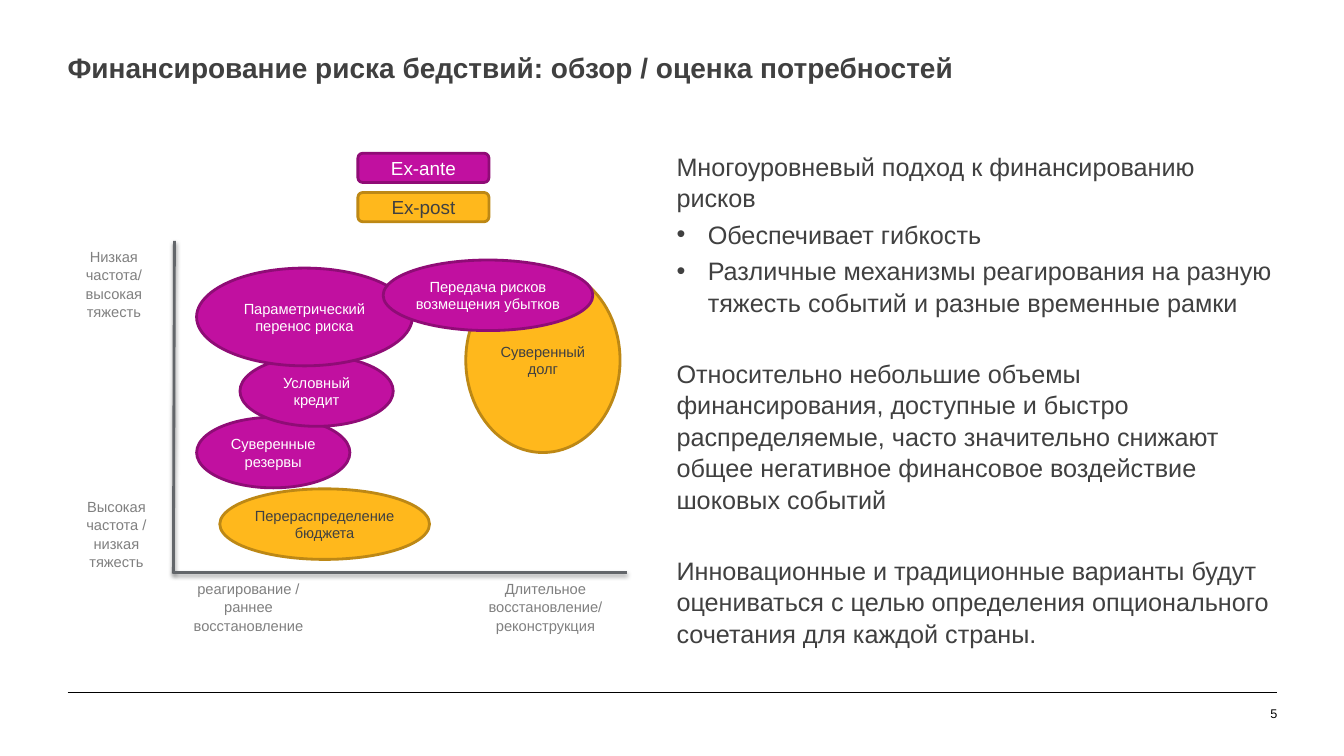
from lxml import etree
from pptx import Presentation
from pptx.dml.color import RGBColor
from pptx.enum.shapes import MSO_CONNECTOR, MSO_SHAPE
from pptx.enum.text import MSO_ANCHOR, PP_ALIGN
from pptx.oxml.ns import qn
from pptx.util import Inches, Pt

STRAIGHT = MSO_CONNECTOR.STRAIGHT
ELLIPSE = MSO_SHAPE.OVAL
ROUNDED = MSO_SHAPE.ROUNDED_RECTANGLE
TOP, MIDDLE, BOTTOM = MSO_ANCHOR.TOP, MSO_ANCHOR.MIDDLE, MSO_ANCHOR.BOTTOM
LEFT, CENTER, RIGHT = PP_ALIGN.LEFT, PP_ALIGN.CENTER, PP_ALIGN.RIGHT

FONT = "Arial"
BLACK, DARK, GREY, AXIS = "000000", "404040", "808080", "63666A"
EX_ANTE = ("C110A0", "8F0C76", "FFFFFF")
EX_POST = ("FFB81C", "BD8815", DARK)

INSTRUMENTS = [
    ("Суверенный долг", EX_POST, (4.62, 2.66, 1.53, 1.83)),
    ("Суверенные резервы", EX_ANTE, (1.95, 4.14, 1.52, 0.7)),
    ("Условный кредит", EX_ANTE, (2.38, 3.53, 1.52, 0.7)),
    ("Параметрический перенос риска", EX_ANTE, (1.95, 2.66, 2.14, 0.97)),
    ("Перераспределение бюджета", EX_POST, (2.18, 4.85, 2.08, 0.7)),
    ("Передача рисков возмещения убытков", EX_ANTE, (3.8, 2.58, 2.08, 0.7)),
]
AXIS_LABELS = [
    ("реагирование / раннее восстановление", (1.73, 5.69, 1.47, 0.63)),
    ("Длительное восстановление/\nреконструкция", (4.62, 5.69, 1.58, 0.63)),
    ("Низкая частота/\nвысокая тяжесть", (0.56, 2.4, 1.14, 0.81)),
    ("Высокая частота / низкая тяжесть", (0.61, 4.88, 1.09, 0.81)),
]
BODY = [
    ("Многоуровневый подход к финансированию рисков", False, 0),
    ("Обеспечивает гибкость", True, 0),
    ("Различные механизмы реагирования на разную тяжесть событий "
     "и разные временные рамки", True, 0),
    ("Относительно небольшие объемы финансирования, доступные и быстро "
     "распределяемые, часто значительно снижают общее негативное финансовое "
     "воздействие шоковых событий", False, 25),
    ("Инновационные и традиционные варианты будут оцениваться с целью "
     "определения опционального сочетания для каждой страны.", False, 25),
]


def color(value):
    """Return the RGB colour for a hex string."""
    return RGBColor.from_string(value)


def write(shape, text, size, font_color, align=LEFT, anchor=TOP,
          inset=(0, 0), bold=False, spacing=1.0):
    """Set the text of a shape and format its runs."""
    frame = shape.text_frame
    frame.text = text
    frame.word_wrap = True
    frame.vertical_anchor = anchor
    frame.margin_left = frame.margin_right = Inches(inset[0])
    frame.margin_top = frame.margin_bottom = Inches(inset[1])
    for paragraph in frame.paragraphs:
        paragraph.alignment = align
        paragraph.line_spacing = spacing
        for run in paragraph.runs:
            run.font.name = FONT
            run.font.size = Pt(size)
            run.font.bold = bold
            run.font.color.rgb = color(font_color)


def add_text(slide, box, *args, **options):
    """Add a text box and write into it."""
    shape = slide.shapes.add_textbox(*map(Inches, box))
    write(shape, *args, **options)
    return shape


def add_bubble(slide, preset, text, scheme, box, size):
    """Add a filled, outlined shape with centred text."""
    fill, outline, font_color = scheme
    shape = slide.shapes.add_shape(preset, *map(Inches, box))
    shape.shadow.inherit = False
    shape.fill.solid()
    shape.fill.fore_color.rgb = color(fill)
    shape.line.color.rgb = color(outline)
    shape.line.width = Pt(2)
    write(shape, text, size, font_color, CENTER, MIDDLE)


def add_line(slide, ends, line_color, width, shadow=False):
    """Add a straight line, with a soft shadow below it if asked."""
    line = slide.shapes.add_connector(STRAIGHT, *map(Inches, ends))
    line.line.color.rgb = color(line_color)
    line.line.width = Pt(width)
    properties = line._element.find(qn("p:spPr"))
    effects = etree.SubElement(properties, qn("a:effectLst"))
    if shadow:
        outer = etree.SubElement(effects, qn("a:outerShdw"), blurRad="39400",
                                 dist="20300", dir="5400000", rotWithShape="0")
        tint = etree.SubElement(outer, qn("a:srgbClr"), val=BLACK)
        etree.SubElement(tint, qn("a:alpha"), val="38000")


def add_bullet(paragraph):
    """Give a paragraph a hanging bullet."""
    properties = paragraph._p.get_or_add_pPr()
    properties.set("marL", str(Inches(0.31)))
    properties.set("indent", str(-Inches(0.31)))
    etree.SubElement(properties, qn("a:buFont"), typeface=FONT)
    etree.SubElement(properties, qn("a:buChar"), char="•")


def add_body(slide):
    """Add the explanatory text on the right."""
    text = "\n".join(line for line, _, _ in BODY)
    shape = add_text(slide, (6.71, 1.49, 5.95, 4.86), text, 18, DARK, spacing=1.04)
    for paragraph, (_, bulleted, before) in zip(shape.text_frame.paragraphs, BODY):
        paragraph.space_before = Pt(before)
        paragraph.space_after = Pt(3.5)
        if bulleted:
            add_bullet(paragraph)


def add_diagram(slide):
    """Add the instruments, axes, labels and legend."""
    add_line(slide, (1.73, 2.39, 1.72, 5.69), AXIS, 2, shadow=True)
    add_line(slide, (6.22, 5.68, 1.72, 5.68), AXIS, 2, shadow=True)
    for text, scheme, box in INSTRUMENTS:
        add_bubble(slide, ELLIPSE, text, scheme, box, 10.5)
    for text, box in AXIS_LABELS:
        add_text(slide, box, text, 10.5, GREY, CENTER, inset=(0.1, 0.05), spacing=1.05)
    for row, (text, scheme) in enumerate([("Ex-ante", EX_ANTE), ("Ex-post", EX_POST)]):
        add_bubble(slide, ROUNDED, text, scheme, (3.55, 1.52 + 0.39 * row, 1.3, 0.29), 13.5)


def main():
    """Build and save the slide."""
    presentation = Presentation()
    presentation.slide_width = Inches(13.33)
    presentation.slide_height = Inches(7.5)
    slide = presentation.slides.add_slide(presentation.slide_layouts[6])
    add_line(slide, (0.67, 6.87, 12.67, 6.87), BLACK, 0.25)
    add_text(slide, (0.67, 0.5, 12, 0.34),
             "Финансирование риска бедствий: обзор / оценка потребностей",
             20, DARK, bold=True)
    add_text(slide, (12.11, 7, 0.56, 0.15), "5", 9, BLACK, RIGHT, BOTTOM)
    add_body(slide)
    add_diagram(slide)
    presentation.save("out.pptx")


if __name__ == "__main__":
    main()
